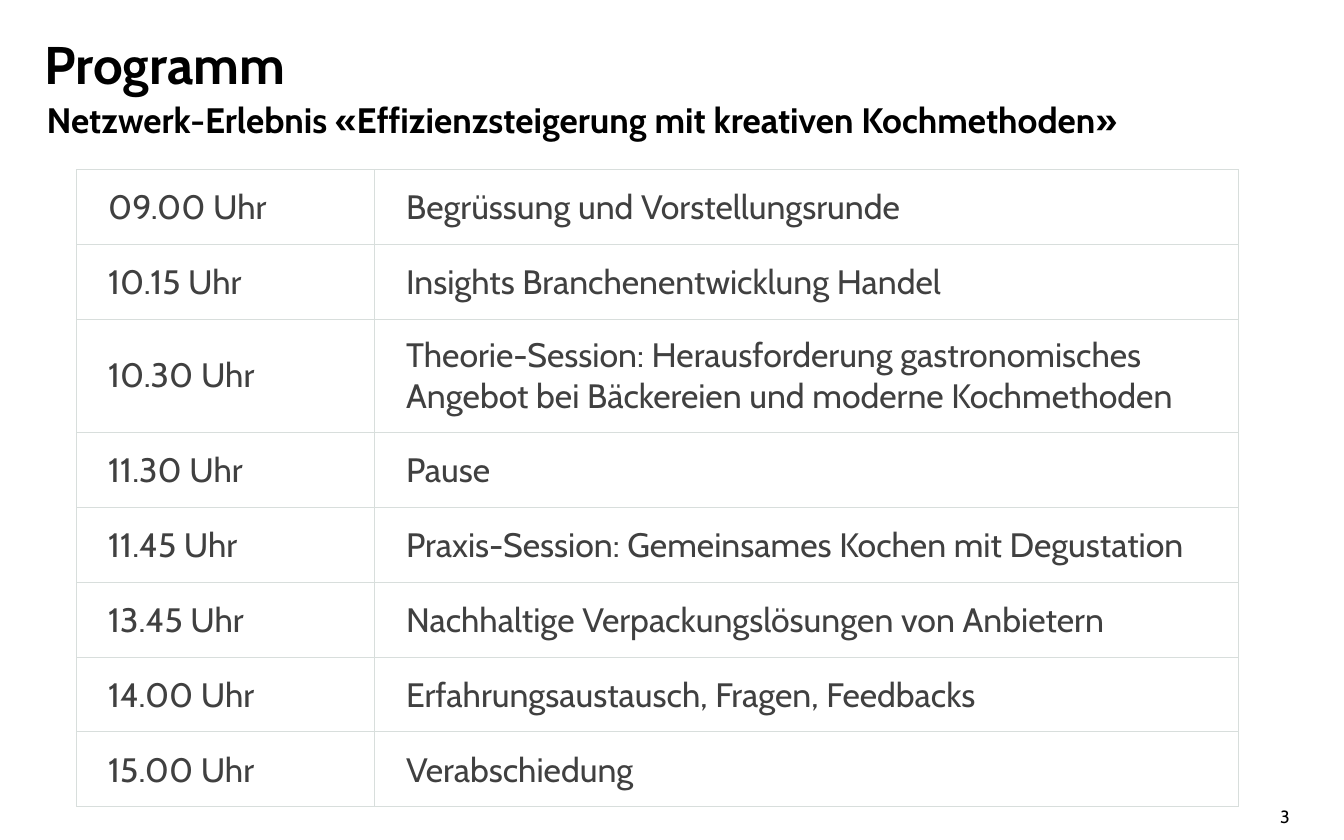
from pptx import Presentation
from pptx.dml.color import RGBColor
from pptx.enum.text import MSO_ANCHOR, MSO_AUTO_SIZE, PP_ALIGN
from pptx.oxml import parse_xml
from pptx.oxml.ns import nsdecls
from pptx.util import Pt

LEFT, RIGHT = PP_ALIGN.LEFT, PP_ALIGN.RIGHT
TOP, MIDDLE, BOTTOM = MSO_ANCHOR.TOP, MSO_ANCHOR.MIDDLE, MSO_ANCHOR.BOTTOM
NO_AUTOFIT = MSO_AUTO_SIZE.NONE

AGENDA = [
    ("09.00 Uhr", "Begrüssung und Vorstellungsrunde"),
    ("10.15 Uhr", "Insights Branchenentwicklung Handel"),
    ("10.30 Uhr", "Theorie-Session: Herausforderung gastronomisches "
                  "Angebot bei Bäckereien und moderne Kochmethoden"),
    ("11.30 Uhr", "Pause"),
    ("11.45 Uhr", "Praxis-Session: Gemeinsames Kochen mit Degustation"),
    ("13.45 Uhr", "Nachhaltige Verpackungslösungen von Anbietern"),
    ("14.00 Uhr", "Erfahrungsaustausch, Fragen, Feedbacks"),
    ("15.00 Uhr", "Verabschiedung"),
]
SESSION_ROW = 2
ROW_HEIGHT, SESSION_HEIGHT = 50.9, 77


def color(hex_value):
    return RGBColor.from_string(hex_value)


def write(frame, text, size, font="Cabin", ink="000000", bold=False,
          align=LEFT, spacing=1.0, bullet=True):
    frame.word_wrap = True
    paragraph = frame.paragraphs[0]
    if not bullet:
        properties = paragraph._p.get_or_add_pPr()
        properties.set("marL", "0")
        properties.set("indent", "0")
        properties.append(parse_xml(f"<a:buNone {nsdecls('a')}/>"))
    paragraph.alignment = align
    paragraph.line_spacing = spacing
    paragraph.space_before = paragraph.space_after = Pt(0)
    run = paragraph.add_run()
    run.text = text
    run.font.name = font
    run.font.size = Pt(size)
    run.font.bold = bold
    run.font.color.rgb = color(ink)


class AgendaSlide:
    """Hold the agenda style and the slide it is applied to."""

    ink = "404040"
    border = "D8DEDC"

    def __init__(self, deck):
        self.slide = deck.slides.add_slide(deck.slide_layouts[1])

    def placeholder(self, index, text, box, size, **style):
        holder = self.slide.placeholders[index]
        holder.left, holder.top, holder.width, holder.height = map(Pt, box)
        frame = holder.text_frame
        frame.margin_left = frame.margin_right = Pt(0)
        frame.margin_top = frame.margin_bottom = Pt(0)
        frame.vertical_anchor = TOP
        frame.auto_size = NO_AUTOFIT
        write(frame, text, size, bold=True, **style)

    def label(self, text, box, size, **style):
        frame = self.slide.shapes.add_textbox(*map(Pt, box)).text_frame
        frame.vertical_anchor = MIDDLE
        write(frame, text, size, **style)

    def cell(self, cell, text, anchor):
        cell.margin_left, cell.margin_right = Pt(21.6), Pt(1.4)
        cell.margin_top = cell.margin_bottom = Pt(10.8)
        cell.vertical_anchor = anchor
        properties = cell._tc.get_or_add_tcPr()
        for side in "LRTB":
            properties.append(parse_xml(
                f'<a:ln{side} {nsdecls("a")} w="{Pt(0.75)}"><a:solidFill>'
                f'<a:srgbClr val="{self.border}"/></a:solidFill></a:ln{side}>'))
        cell.fill.background()
        write(cell.text_frame, text, 23, ink=self.ink)

    def table(self, entries, left, top, widths):
        heights = [SESSION_HEIGHT if number == SESSION_ROW else ROW_HEIGHT
                   for number in range(len(entries))]
        box = map(Pt, (left, top, sum(widths), sum(heights)))
        table = self.slide.shapes.add_table(
            len(entries), len(widths), *box).table
        table.first_row = table.horz_banding = False
        for column, width in zip(table.columns, widths):
            column.width = Pt(width)
        for number, entry in enumerate(entries):
            table.rows[number].height = Pt(heights[number])
            for position, text in enumerate(entry):
                is_session_time = number == SESSION_ROW and position == 0
                self.cell(table.cell(number, position), text,
                          MIDDLE if is_session_time else BOTTOM)


def main():
    deck = Presentation()
    deck.slide_width, deck.slide_height = Pt(913.7), Pt(571)
    agenda = AgendaSlide(deck)
    agenda.placeholder(0, "Programm", (30.2, 26.6, 739, 32), 36, spacing=0.9)
    agenda.placeholder(
        1, "Netzwerk-Erlebnis «Effizienzsteigerung mit kreativen Kochmethoden»",
        (31.7, 67, 749, 27), 24, bullet=False)
    agenda.label("3", (678, 540, 206, 30), 12, align=RIGHT)
    agenda.table(AGENDA, 52, 115.2, (202.5, 587.5))
    deck.save("out.pptx")


if __name__ == "__main__":
    main()
